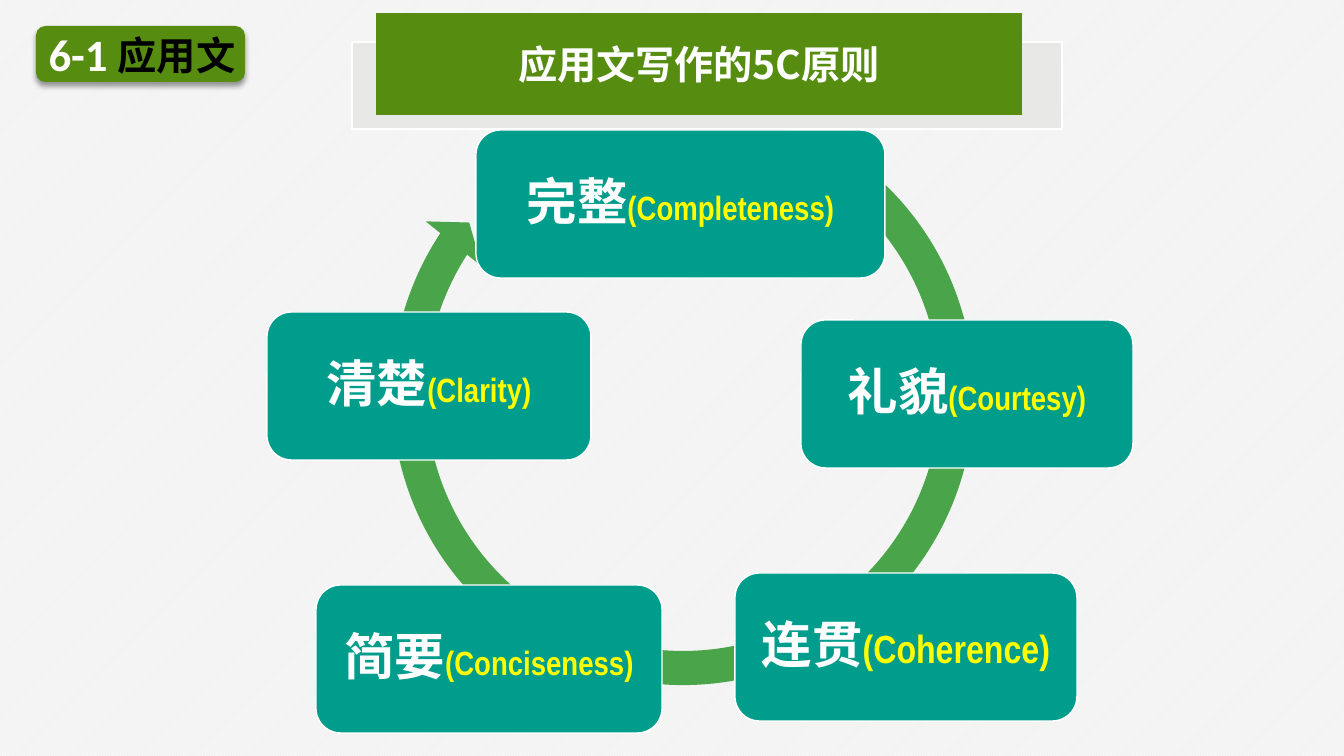
from dataclasses import dataclass

from lxml import etree
from pptx import Presentation
from pptx import util as u
from pptx.dml.color import RGBColor
from pptx.enum import dml, shapes, text
from pptx.oxml import ns

EMU_PER_PX = 914400 / 100.8


@dataclass(frozen=True)
class Theme:
    white: str = "FFFFFF"
    black: str = "000000"
    yellow: str = "FFFF00"
    paper: str = "F2F2F2"
    grey: str = "E8E8E6"
    olive: str = "568D11"
    ring: str = "4AA44A"
    teal: str = "009D8C"
    cjk: str = "Noto Sans CJK SC"
    latin: str = "Calibri"
    narrow: str = "Arial Narrow"
    heading: int = 28
    number: int = 32
    principle: int = 36
    english: int = 24
    english_large: int = 28


@dataclass(frozen=True)
class Box:
    x: int
    y: int
    w: int
    h: int

    def emu(self) -> tuple[u.Emu, ...]:
        return tuple(px(n) for n in (self.x, self.y, self.w, self.h))


@dataclass(frozen=True)
class Run:
    words: str
    size: int
    font: str
    color: str
    bold: bool = True


@dataclass(frozen=True)
class Principle:
    chinese: str
    english: str
    x: int
    y: int
    w: int
    english_size: int


T = Theme()
NODE_HEIGHT = 148
NODE_INSET = 16
PRINCIPLES = [
    Principle("完整", "(Completeness)", 476, 130, 409, T.english),
    Principle("礼貌", "(Courtesy)", 801, 320, 332, T.english),
    Principle("连贯", "(Coherence)", 735, 573, 342, T.english_large),
    Principle("简要", "(Conciseness)", 316, 585, 346, T.english),
    Principle("清楚", "(Clarity)", 267, 312, 324, T.english),
]


def px(n: int) -> u.Emu:
    return u.Emu(round(n * EMU_PER_PX))


def rgb(color: str) -> RGBColor:
    return RGBColor.from_string(color)


def add_block(slide, kind, box: Box, fill: str, outline: str | None = None):
    sp = slide.shapes.add_shape(kind, *box.emu())
    sp.shadow.inherit = False
    sp.fill.solid()
    sp.fill.fore_color.rgb = rgb(fill)
    if outline:
        sp.line.color.rgb = rgb(outline)
        sp.line.width = u.Pt(1)
    else:
        sp.line.fill.background()
    return sp


def write(sp, runs: list[Run], align=text.PP_ALIGN.CENTER,
          anchor=text.MSO_ANCHOR.MIDDLE, wrap: bool = True):
    """Fill the shape's first paragraph run by run and return that paragraph."""
    tf = sp.text_frame
    tf.word_wrap = wrap
    tf.vertical_anchor = anchor
    p = tf.paragraphs[0]
    p.alignment = align
    for run in runs:
        r = p.add_run()
        r.text = run.words
        r.font.size = u.Pt(run.size)
        r.font.bold = run.bold
        r.font.color.rgb = rgb(run.color)
        r.font.name = run.font
        east_asian = etree.SubElement(r.font._element, ns.qn("a:ea"))
        east_asian.set("typeface", run.font)
    return p


def add_soft_shadow(sp) -> None:
    """Drop a 40% black shadow straight down."""
    effects = sp._element.spPr.find(ns.qn("a:effectLst"))
    shadow = etree.SubElement(effects, ns.qn("a:outerShdw"), blurRad=str(u.Pt(4)),
                              dist=str(u.Pt(3)), dir="5400000", rotWithShape="0")
    color = etree.SubElement(shadow, ns.qn("a:srgbClr"), val=T.black)
    etree.SubElement(color, ns.qn("a:alpha"), val="40000")


def add_ring(slide) -> None:
    ring = add_block(slide, shapes.MSO_SHAPE.CIRCULAR_ARROW,
                     Box(373, 84, 620, 620), T.ring)
    for i, value in enumerate((0.055, 3.31, 127.93, 180.18, 0.058)):
        ring.adjustments[i] = value


def add_principle(slide, item: Principle) -> None:
    sp = add_block(slide, shapes.MSO_SHAPE.ROUNDED_RECTANGLE,
                   Box(item.x, item.y, item.w, NODE_HEIGHT), T.teal, T.white)
    tf = sp.text_frame
    tf.margin_left = tf.margin_right = px(NODE_INSET)
    tf.margin_top = tf.margin_bottom = px(NODE_INSET)
    p = write(sp, [
        Run(item.chinese, T.principle, T.cjk, T.white),
        Run(item.english, item.english_size, T.narrow, T.yellow),
    ])
    p.line_spacing = 0.9


def add_badge(slide) -> None:
    badge = add_block(slide, shapes.MSO_SHAPE.ROUNDED_RECTANGLE,
                      Box(36, 26, 209, 56), T.olive)
    add_soft_shadow(badge)
    write(badge, [Run("6-1", T.number, T.latin, T.white)], text.PP_ALIGN.LEFT)
    label = slide.shapes.add_textbox(*Box(107, 26, 139, 58).emu())
    write(label, [Run("应用文", T.heading, T.cjk, T.black)],
          anchor=text.MSO_ANCHOR.TOP, wrap=False)


def format_title(slide) -> None:
    """Place the title as a green banner in front of everything else."""
    title = slide.shapes.title
    title.left, title.top, title.width, title.height = Box(376, 13, 646, 102).emu()
    title.fill.solid()
    title.fill.fore_color.rgb = rgb(T.olive)
    title.text_frame.auto_size = text.MSO_AUTO_SIZE.NONE
    write(title, [Run("应用文写作的5C原则", T.heading, T.cjk, T.white)])
    slide.shapes._spTree.append(title._element)


def main() -> None:
    prs = Presentation()
    prs.slide_width, prs.slide_height = px(1344), px(756)
    slide = prs.slides.add_slide(prs.slide_layouts.get_by_name("Title Only"))

    fill = slide.background.fill
    fill.patterned()
    fill.pattern = dml.MSO_PATTERN.LIGHT_UPWARD_DIAGONAL
    fill.fore_color.rgb = rgb(T.white)
    fill.back_color.rgb = rgb(T.paper)

    add_block(slide, shapes.MSO_SHAPE.RECTANGLE, Box(352, 42, 710, 87), T.grey, T.white)
    add_ring(slide)
    for item in PRINCIPLES:
        add_principle(slide, item)
    add_badge(slide)
    format_title(slide)
    prs.save("out.pptx")


if __name__ == "__main__":
    main()
